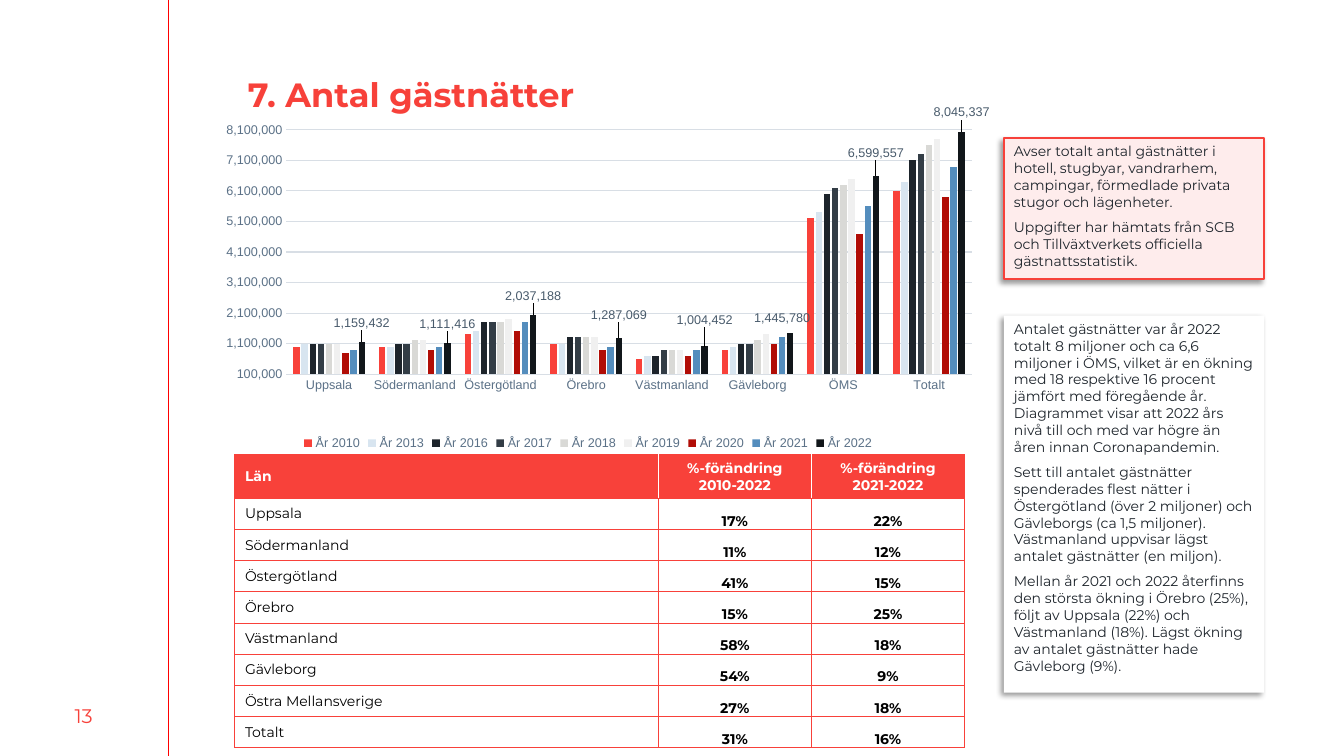
"""Build the slide on guest nights per county: chart, change table and two notes."""
from dataclasses import dataclass
from typing import Optional

from lxml import etree
from pptx import Presentation
from pptx import util as u
from pptx.chart import data as cd
from pptx.dml import color
from pptx.enum import chart as ce, shapes, text
from pptx.oxml import ns

COLORS = {
    "red": "F7413A", "table": "F8413A", "rule": "FF0000", "ink": "1D242B",
    "axis": "5B7187", "grid": "D8DEE5", "label": "495B6C", "pink": "FEECEC",
    "white": "FFFFFF", "black": "000000",
}
FONT = "Montserrat"
COUNTIES = ["Uppsala", "Södermanland", "Östergötland", "Örebro", "Västmanland", "Gävleborg"]


@dataclass
class Box:
    left: float
    top: float
    width: float
    height: float

    def pts(self) -> list:
        return [u.Pt(v) for v in (self.left, self.top, self.width, self.height)]


@dataclass
class Note:
    box: Box
    fill: str
    line: Optional[str]
    paragraphs: list


@dataclass
class Year:
    year: int
    color: str
    values: list


MILLION = 1_000_000
YEARS = [
    Year(2010, "F8413A", [1, 1, 1.4, 1.1, 0.6, 0.9, 5.2, 6.1]),
    Year(2013, "D8E5F0", [1.1, 1, 1.5, 1.1, 0.7, 1, 5.4, 6.4]),
    Year(2016, "1D242B", [1.1, 1.1, 1.8, 1.3, 0.7, 1.1, 6, 7.1]),
    Year(2017, "333D46", [1.1, 1.1, 1.8, 1.3, 0.9, 1.1, 6.2, 7.3]),
    Year(2018, "D9D9D6", [1.1, 1.2, 1.8, 1.3, 0.9, 1.2, 6.3, 7.6]),
    Year(2019, "F0F0F0", [1.1, 1.2, 1.9, 1.3, 0.9, 1.4, 6.5, 7.8]),
    Year(2020, "B10D06", [0.8, 0.9, 1.5, 0.9, 0.7, 1.1, 4.7, 5.9]),
    Year(2021, "548DBD", [0.9, 1, 1.8, 1, 0.9, 1.3, 5.6, 6.9]),
    Year(2022, "11161A", [1.159432, 1.111416, 2.037188, 1.287069, 1.004452, 1.44578,
                          6.599557, 8.045337]),
]
LABEL_SHIFTS = [(0, -0.02), (0, -0.02), (0, -0.02), (0, -0.03),
                (0, -0.04), (-0.01, -0.01), (0, -0.03), (0, -0.02)]
CHANGES = [(17, 22), (11, 12), (41, 15), (15, 25), (58, 18), (54, 9), (27, 18), (31, 16)]
NOTES = [
    Note(Box(717.1, 98.6, 185.8, 100.8), "pink", "red", [
        "Avser totalt antal gästnätter i hotell, stugbyar, vandrarhem, campingar, "
        "förmedlade privata stugor och lägenheter.",
        "Uppgifter har hämtats från SCB och Tillväxtverkets officiella gästnattsstatistik.",
    ]),
    Note(Box(717.1, 225.4, 185.8, 269.3), "white", None, [
        "Antalet gästnätter var år 2022 totalt 8 miljoner och ca 6,6 miljoner i ÖMS, vilket är "
        "en ökning med 18 respektive 16 procent jämfört med föregående år. Diagrammet visar att "
        "2022 års nivå till och med var högre än åren innan Coronapandemin.",
        "Sett till antalet gästnätter spenderades flest nätter i Östergötland (över 2 miljoner) "
        "och Gävleborgs (ca 1,5 miljoner). Västmanland uppvisar lägst antalet gästnätter "
        "(en miljon).",
        "Mellan år 2021 och 2022 återfinns den största ökning i Örebro (25%), följt av Uppsala "
        "(22%) och Västmanland (18%). Lägst ökning av antalet gästnätter hade Gävleborg (9%).",
    ]),
]


def rgb(name: str) -> color.RGBColor:
    return color.RGBColor.from_string(COLORS.get(name, name))


def assign(obj, **values) -> None:
    for key, value in values.items():
        setattr(obj, key, value)


def set_font(font, size: float, name: str, shade: str, bold: bool = False) -> None:
    assign(font, size=u.Pt(size), name=name, bold=bold)
    font.color.rgb = rgb(shade)


def fill_solid(fill, shade: str) -> None:
    fill.solid()
    fill.fore_color.rgb = rgb(shade)


def set_line(line, shade: str, width: float = 0.75) -> None:
    line.color.rgb = rgb(shade)
    line.width = u.Pt(width)


def manual_layout(**values):
    layout = etree.Element(ns.qn("c:layout"))
    manual = etree.SubElement(layout, ns.qn("c:manualLayout"))
    for key, value in values.items():
        etree.SubElement(manual, ns.qn(f"c:{key}"), val=str(value))
    return layout


def add_text(s, box: Box, content: str, size: float, bold: bool, align, anchor) -> None:
    tf = s.shapes.add_textbox(*box.pts()).text_frame
    assign(tf, word_wrap=True, vertical_anchor=anchor, **{
        f"margin_{side}": u.Pt(3.6) for side in ("left", "top", "right", "bottom")})
    p = tf.paragraphs[0]
    assign(p, text=content, alignment=align)
    set_font(p.runs[0].font, size, FONT, "red", bold)


def add_note(s, note: Note) -> None:
    sp = s.shapes.add_shape(shapes.MSO_SHAPE.RECTANGLE, *note.box.pts())
    sp.shadow.inherit = False
    fill_solid(sp.fill, note.fill)
    if note.line:
        set_line(sp.line, note.line, 1)
    else:
        sp.line.fill.background()
    effects = sp._element.spPr.find(ns.qn("a:effectLst"))
    shadow = etree.SubElement(effects, ns.qn("a:outerShdw"), blurRad=str(u.Pt(4)),
                              dist=str(u.Pt(3)), dir="8100000", algn="tr", rotWithShape="0")
    shade = etree.SubElement(shadow, ns.qn("a:srgbClr"), val=COLORS["black"])
    etree.SubElement(shade, ns.qn("a:alpha"), val="40000")
    tf = sp.text_frame
    assign(tf, word_wrap=True, vertical_anchor=text.MSO_ANCHOR.TOP)
    for i, content in enumerate(note.paragraphs):
        p = tf.add_paragraph() if i else tf.paragraphs[0]
        assign(p, text=content, alignment=text.PP_ALIGN.LEFT,
               space_before=u.Pt(3 if i else 0), space_after=u.Pt(3))
        set_font(p.runs[0].font, 10, FONT, "ink")


def add_guest_chart(s, box: Box) -> None:
    data = cd.CategoryChartData(number_format="#,##0")
    data.categories = COUNTIES + ["ÖMS", "Totalt"]
    for year in YEARS:
        data.add_series(f"År {year.year}", [round(v * MILLION) for v in year.values])
    ch = s.shapes.add_chart(ce.XL_CHART_TYPE.COLUMN_CLUSTERED, *box.pts(), data).chart
    assign(ch, has_title=False, has_legend=True)
    set_font(ch.font, 10, "Arial", "ink")
    assign(ch.legend, position=ce.XL_LEGEND_POSITION.BOTTOM, include_in_layout=False)
    set_font(ch.legend.font, 9, "Arial", "axis")
    for axis in (ch.category_axis, ch.value_axis):
        assign(axis, major_tick_mark=ce.XL_TICK_MARK.NONE, minor_tick_mark=ce.XL_TICK_MARK.NONE)
        set_font(axis.tick_labels.font, 9, "Arial", "axis")
    set_line(ch.category_axis.format.line, "grid")
    va = ch.value_axis
    assign(va, minimum_scale=100_000, maximum_scale=8_100_000, major_unit=MILLION)
    assign(va.tick_labels, number_format="#,##0", number_format_is_linked=False)
    va.format.line.fill.background()
    set_line(va.major_gridlines.format.line, "grid")
    plot = ch.plots[0]
    assign(plot, gap_width=219, overlap=-27, vary_by_categories=False)
    for series, year in zip(plot.series, YEARS):
        fill_solid(series.format.fill, year.color)
    latest = plot.series[len(YEARS) - 1]
    labels = latest.data_labels
    assign(labels, show_value=True, number_format="#,##0", number_format_is_linked=False,
           position=ce.XL_LABEL_POSITION.OUTSIDE_END)
    set_font(labels.font, 9, "Arial", "label")
    for i, (dx, dy) in enumerate(LABEL_SHIFTS):
        label = latest.points[i].data_label
        label.position = ce.XL_LABEL_POSITION.OUTSIDE_END
        set_font(label.font, 9, "Arial", "label")
    for el, (dx, dy) in zip(latest._element.iter(ns.qn("c:dLbl")), LABEL_SHIFTS):
        el.insert(1, manual_layout(x=dx, y=dy))
    area = ch._chartSpace.find(".//" + ns.qn("c:plotArea"))
    for old in area.findall(ns.qn("c:layout")):
        area.remove(old)
    area.insert(0, manual_layout(layoutTarget="inner", xMode="edge", yMode="edge",
                                 x=0.128, y=0.139, w=0.845, h=0.648))


def add_borders(cell, shades: dict) -> None:
    tc_pr = cell._tc.get_or_add_tcPr()
    for i, (side, shade) in enumerate(shades.items()):
        ln = etree.Element(ns.qn(f"a:ln{side}"), w=str(u.Pt(0.75)))
        fill = etree.SubElement(ln, ns.qn("a:solidFill"))
        etree.SubElement(fill, ns.qn("a:srgbClr"), val=COLORS[shade])
        tc_pr.insert(i, ln)


def add_change_table(s, box: Box) -> None:
    rows = [("Län", "%-förändring 2010-2022", "%-förändring 2021-2022")]
    names = COUNTIES + ["Östra Mellansverige", "Totalt"]
    rows += [(name, f"{a}%", f"{b}%") for name, (a, b) in zip(names, CHANGES)]
    tbl = s.shapes.add_table(len(rows), 3, *box.pts()).table
    tbl.horz_banding = False
    for col, width in zip(tbl.columns, (302.4, 109.4, 109.4)):
        col.width = u.Pt(width)
    for i, row in enumerate(rows):
        tbl.rows[i].height = u.Pt(22.3 if i else 29.5)
        for j, content in enumerate(row):
            cell = tbl.cell(i, j)
            cell.vertical_anchor = text.MSO_ANCHOR.BOTTOM if i and j else text.MSO_ANCHOR.MIDDLE
            if i and j:
                assign(cell, margin_left=u.Pt(0.7), margin_right=u.Pt(0.7),
                       margin_top=u.Pt(0.7), margin_bottom=0)
            p = cell.text_frame.paragraphs[0]
            assign(p, text=content, alignment=text.PP_ALIGN.CENTER if j else text.PP_ALIGN.LEFT)
            set_font(p.runs[0].font, 10, FONT, "black" if i else "white", not i or j > 0)
            if i:
                cell.fill.background()
            else:
                fill_solid(cell.fill, "table")
            add_borders(cell, {"L": "white" if not i and j else "table",
                               "R": "white" if not i and j < 2 else "table",
                               "T": "table", "B": "table"})


def main() -> None:
    prs = Presentation()
    assign(prs, slide_width=u.Pt(960), slide_height=u.Pt(540))
    s = prs.slides.add_slide(prs.slide_layouts[6])
    add_text(s, Box(0, 496.8, 119.5, 28.8), "13", 14, False,
             text.PP_ALIGN.CENTER, text.MSO_ANCHOR.MIDDLE)
    rule = s.shapes.add_connector(shapes.MSO_CONNECTOR.STRAIGHT,
                                  u.Pt(120.2), 0, u.Pt(120.2), u.Pt(540))
    set_line(rule.line, "rule")
    etree.SubElement(rule._element.spPr, ns.qn("a:effectLst"))
    add_guest_chart(s, Box(130.3, 55.4, 579.6, 269.3))
    add_text(s, Box(173.5, 49, 728.6, 64.1), "7. Antal gästnätter", 24, True,
             text.PP_ALIGN.LEFT, text.MSO_ANCHOR.TOP)
    add_change_table(s, Box(167.8, 324.7, 521.2, 207.9))
    for note in NOTES:
        add_note(s, note)
    prs.save("out.pptx")


if __name__ == "__main__":
    main()
